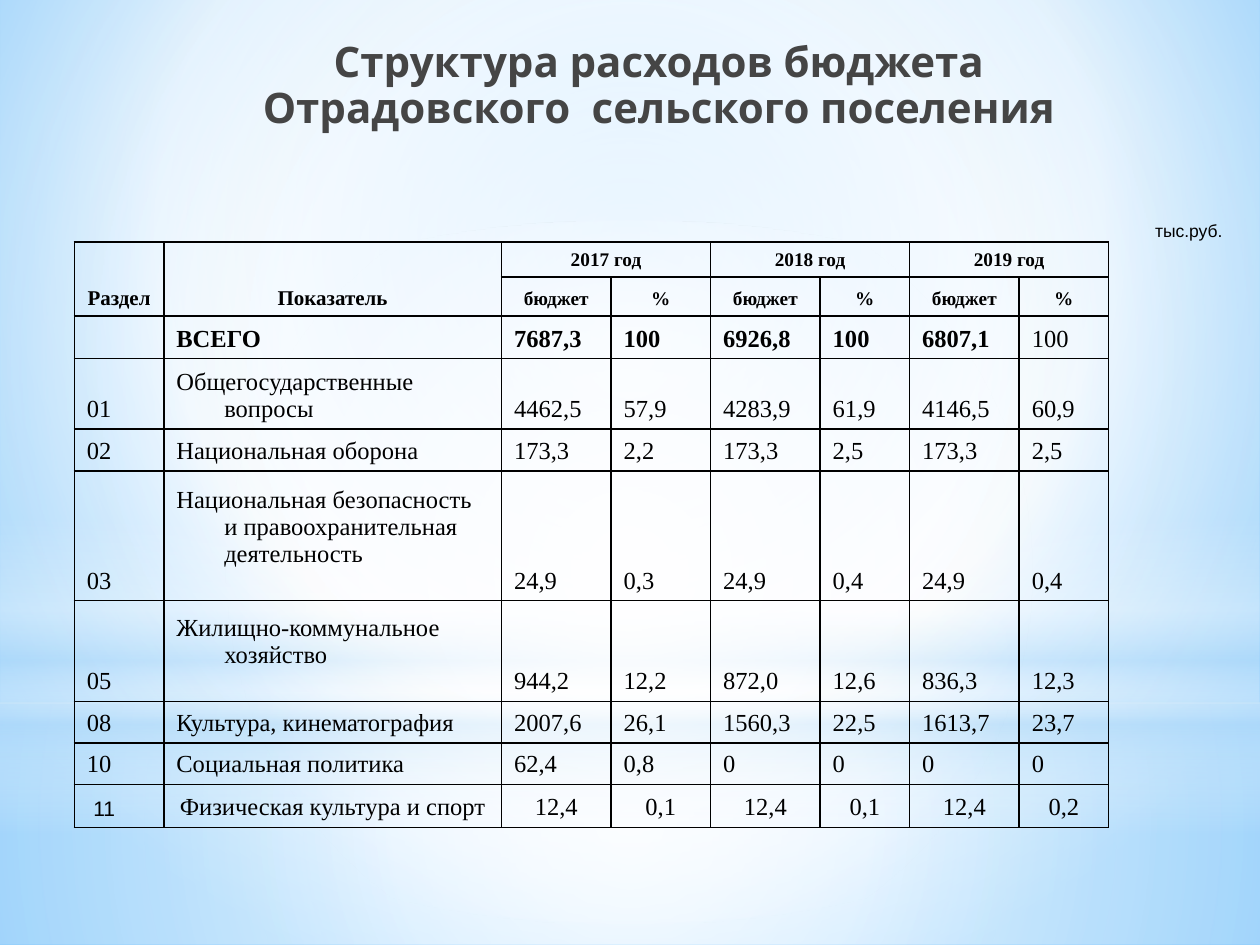
from dataclasses import dataclass

from lxml import etree
from pptx import Presentation, util as u
from pptx.dml.color import RGBColor
from pptx.enum import shapes, text
from pptx.oxml import ns

AL = text.PP_ALIGN


@dataclass(frozen=True)
class Theme:
    ink: str = "000000"
    title_ink: str = "454545"
    white: str = "FFFFFF"
    haze: str = "B4DCFA"
    sky: str = "9ED5FF"
    deep_sky: str = "5BB9FF"
    title_font: str = "Karla"
    table_font: str = "Times New Roman"
    note_font: str = "Arial"
    title_size: int = 24
    body_size: int = 14
    head_size: int = 12
    year_size: int = 11
    note_size: int = 10
    border: int = 1


def write(tf, content, font, size, color, bold=False, align=AL.LEFT,
          indent=None, line_spacing=None, space_before=None):
    """Fill a text frame; indent is (left margin, first line) in inches."""
    p = tf.paragraphs[0]
    p.text = content
    p.alignment = align
    if line_spacing:
        p.line_spacing = line_spacing
    if space_before is not None:
        p.space_before = u.Pt(space_before)
    if indent:
        pPr = p._p.get_or_add_pPr()
        for name, value in zip(("marL", "indent"), indent):
            pPr.set(name, str(u.Inches(value)))
    for r in p.runs:
        r.font.name = font
        r.font.size = u.Pt(size)
        r.font.bold = bold
        r.font.color.rgb = RGBColor.from_string(color)
    if not content:
        p._p.get_or_add_endParaRPr().set("sz", str(size * 100))


def sub(parent, tag, **attrs):
    return etree.SubElement(parent, ns.qn(tag), {k: str(v) for k, v in attrs.items()})


def set_gradient(fill, owner, stops, angle=None, focus=(50, 50, 50, 50)):
    """Stops are (position, colour, opacity) in percent; radial without an angle."""
    fill.gradient()
    grad = owner.xpath(".//a:gradFill")[0]
    for child in list(grad):
        grad.remove(child)
    gs_list = sub(grad, "a:gsLst")
    for pos, color, opacity in stops:
        clr = sub(sub(gs_list, "a:gs", pos=pos * 1000), "a:srgbClr", val=color)
        if opacity < 100:
            sub(clr, "a:alpha", val=opacity * 1000)
    if angle is not None:
        sub(grad, "a:lin", ang=angle * 60000, scaled=0)
    else:
        sides = {k: v * 1000 for k, v in zip("ltrb", focus)}
        sub(sub(grad, "a:path", path="circle"), "a:fillToRect", **sides)


class SlideBuilder:
    def __init__(self, prs, theme):
        self.t = theme
        self.s = prs.slides.add_slide(prs.slide_layouts[5])

    def background(self, stops, focus):
        set_gradient(self.s.background.fill, self.s._element, stops, focus=focus)

    def glow(self, kind, box, stops, angle=None):
        sp = self.s.shapes.add_shape(kind, *map(u.Inches, box))
        sp.shadow.inherit = False
        sp.line.fill.background()
        set_gradient(sp.fill, sp._element, stops, angle)

    def title(self, content, box):
        sp = self.s.shapes.title
        sp.left, sp.top, sp.width, sp.height = map(u.Inches, box)
        self.s.shapes._spTree.append(sp._element)  # bring in front of the glows
        tf = sp.text_frame
        tf.word_wrap = True
        tf.auto_size = text.MSO_AUTO_SIZE.NONE
        tf.vertical_anchor = text.MSO_ANCHOR.TOP
        write(tf, content, self.t.title_font, self.t.title_size, self.t.title_ink,
              bold=True, align=AL.CENTER, line_spacing=0.9, space_before=0)

    def note(self, content, box):
        tf = self.s.shapes.add_textbox(*map(u.Inches, box)).text_frame
        tf.word_wrap = True
        write(tf, content, self.t.note_font, self.t.note_size, self.t.ink,
              align=AL.RIGHT, space_before=self.t.note_size / 2)

    def table(self, left, top, cols, rows):
        size = map(u.Inches, (left, top, sum(cols), sum(rows)))
        tbl = self.s.shapes.add_table(len(rows), len(cols), *size).table
        tbl.first_row = tbl.horz_banding = False
        for col, width in zip(tbl.columns, cols):
            col.width = u.Inches(width)
        for row, height in zip(tbl.rows, rows):
            row.height = u.Inches(height)
        return tbl

    def cell(self, cell, content, bottom=0.05, **fmt):
        style = dict(font=self.t.table_font, size=self.t.body_size,
                     color=self.t.ink, indent=(0.38, -0.38))
        write(cell.text_frame, content, **{**style, **fmt})
        cell.vertical_anchor = text.MSO_ANCHOR.BOTTOM
        cell.margin_bottom = u.Inches(bottom)
        tcPr = cell._tc.get_or_add_tcPr()
        for side in ("a:lnL", "a:lnR", "a:lnT", "a:lnB"):
            ln = sub(tcPr, side, w=u.Pt(self.t.border))
            sub(sub(ln, "a:solidFill"), "a:srgbClr", val=self.t.ink)
        cell.fill.background()


COLS = [0.71, 2.68, 0.87, 0.79, 0.87, 0.71, 0.87, 0.71]
ROWS = [0.28, 0.31, 0.33, 0.56, 0.33, 1.03, 0.8, 0.33, 0.33, 0.34]
HEADER = [
    ["Раздел", "Показатель", "2017 год", "", "2018 год", "", "2019 год", ""],
    ["", ""] + ["бюджет", "%"] * 3,
]
BUDGET = [
    ["", "ВСЕГО", "7687,3", "100", "6926,8", "100", "6807,1", "100"],
    ["01", "Общегосударственные вопросы", "4462,5", "57,9", "4283,9", "61,9", "4146,5", "60,9"],
    ["02", "Национальная оборона", "173,3", "2,2", "173,3", "2,5", "173,3", "2,5"],
    ["03", "Национальная безопасность и правоохранительная деятельность",
     "24,9", "0,3", "24,9", "0,4", "24,9", "0,4"],
    ["05", "Жилищно-коммунальное хозяйство", "944,2", "12,2", "872,0", "12,6", "836,3", "12,3"],
    ["08", "Культура, кинематография", "2007,6", "26,1", "1560,3", "22,5", "1613,7", "23,7"],
    ["10", "Социальная политика", "62,4", "0,8", "0", "0", "0", "0"],
    ["11", "Физическая культура и спорт", "12,4", "0,1", "12,4", "0,1", "12,4", "0,2"],
]


def add_backdrop(b):
    t, kind = b.t, shapes.MSO_SHAPE
    b.background([(0, t.sky, 100), (60, t.white, 100), (100, t.deep_sky, 100)],
                 focus=(20, 10, 20, 60))
    b.glow(kind.RECTANGLE, (0, 5.58, 10, 1.92),
           [(0, t.white, 91), (37, t.white, 76), (100, t.haze, 79)])
    b.glow(kind.RECTANGLE, (0, 0, 10, 5.58),
           [(0, t.white, 89), (48, t.white, 62), (100, t.haze, 79)])
    b.glow(kind.RECTANGLE, (0, 4.12, 10, 2.5),
           [(0, t.white, 0), (29, t.white, 30), (45, t.haze, 40),
            (55, t.white, 26), (65, t.haze, 60), (100, t.white, 0)], angle=90)
    b.glow(kind.OVAL, (0, 1.75, 10, 5.58), [(0, t.white, 100), (56, t.white, 0)])


def add_budget_table(b):
    tbl = b.table(0.59, 1.92, COLS, ROWS)
    for i, row in enumerate(HEADER):
        for j, value in enumerate(row):
            size = b.t.head_size if j < 2 else b.t.year_size
            b.cell(tbl.cell(i, j), value, size=size, bold=True, align=AL.CENTER)
    for j in (0, 1):
        tbl.cell(0, j).merge(tbl.cell(1, j))
    for j in (2, 4, 6):
        tbl.cell(0, j).merge(tbl.cell(0, j + 1))

    last = len(BUDGET) - 1
    for i, row in enumerate(BUDGET):
        for j, value in enumerate(row):
            fmt = {"bold": i == 0 and j < len(row) - 1}
            if j == 1 and row[0] in ("03", "05"):
                fmt["bottom"] = 0.26
            if i == last and j == 0:
                fmt.update(font=b.t.note_font, size=b.t.head_size, indent=(0.38, -0.33))
            elif i == last:
                fmt["align"] = AL.CENTER
            b.cell(tbl.cell(i + len(HEADER), j), value, **fmt)


def main():
    prs = Presentation()
    prs.slide_width, prs.slide_height = u.Inches(10), u.Inches(7.5)
    b = SlideBuilder(prs, Theme())
    add_backdrop(b)
    b.title("Структура расходов бюджета\vОтрадовского  сельского поселения",
            (0.98, 0.28, 8.5, 1.25))
    add_budget_table(b)
    b.note("тыс.руб.", (8.07, 1.7, 1.73, 0.27))
    prs.save("out.pptx")


if __name__ == "__main__":
    main()
